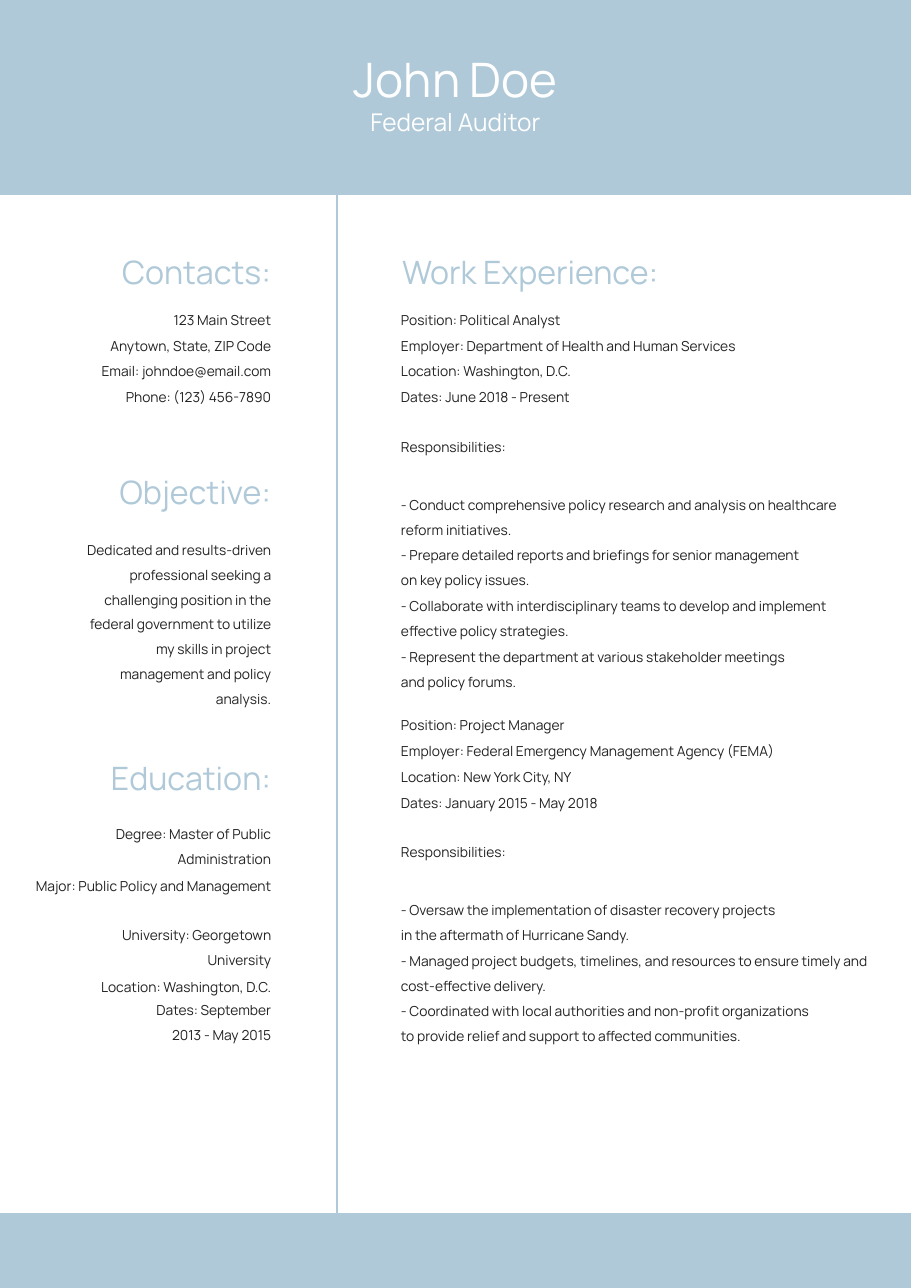
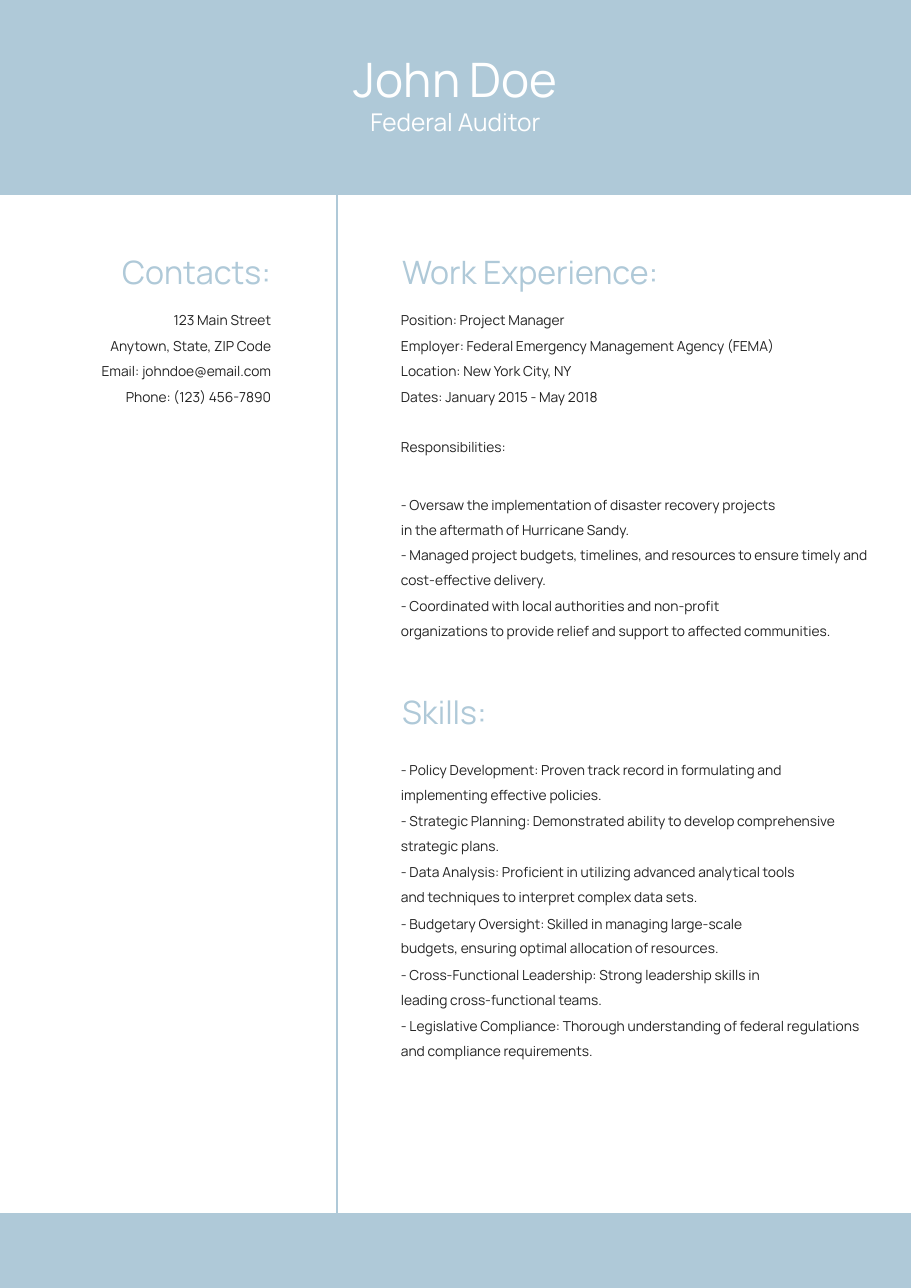
"""Build a two-page résumé with shared bands, contacts and work experience."""
from lxml.etree import SubElement
from pptx import Presentation
from pptx.dml.color import RGBColor
from pptx.enum.shapes import MSO_CONNECTOR, MSO_SHAPE
from pptx.enum.text import MSO_ANCHOR, MSO_AUTO_SIZE, PP_ALIGN
from pptx.oxml.ns import qn
from pptx.util import Inches, Pt

COLORS = {"band": "AFC9D8", "text": "222222", "white": "FFFFFF"}
FONT = "Manrope"
PAGE_WIDTH, PAGE_HEIGHT = 8.27, 11.69
HEADER_HEIGHT, FOOTER_HEIGHT = 1.77, 0.68
DIVIDER_LEFT = 3.06
SIDE_LEFT, SIDE_RIGHT = 0.22, 2.46
MAIN_LEFT, MAIN_WIDTH = 3.64, 4.25
HEADING_TOP, FIRST_LINE_TOP = 2.29, 2.83
LINE_PITCH, ITEM_PITCH, SKILL_PITCH = 0.7 / 3, 0.46, 2.32 / 5
LINE_HEIGHT, ITEM_HEIGHT = 0.15, 0.38

NAME, ROLE = "John Doe", "Federal Auditor"
CONTACTS = [
    "123 Main Street",
    "Anytown, State, ZIP Code",
    "Email: johndoe@email.com",
    "Phone: (123) 456-7890",
]
OBJECTIVE = (
    "Dedicated and results-driven professional seeking a challenging position in the "
    "federal government to utilize my skills in project management and policy analysis."
)
EDUCATION = [
    ("Degree: Master of Public Administration", 0.22, 7.42, ITEM_HEIGHT),
    ("Major: Public Policy and Management", 0.22, 7.89, ITEM_HEIGHT),
    ("University: Georgetown University", 0.57, 8.34, ITEM_HEIGHT),
    ("Location: Washington, D.C.", 0.6, 8.81, LINE_HEIGHT),
    ("Dates: September\n2013 - May 2015", 0.57, 9.02, ITEM_HEIGHT),
]
ANALYST_FACTS = [
    "Position: Political Analyst",
    "Employer: Department of Health and Human Services",
    "Location: Washington, D.C.",
    "Dates: June 2018 - Present",
]
ANALYST_DUTIES = [
    "- Conduct comprehensive policy research and analysis on healthcare reform initiatives.",
    "- Prepare detailed reports and briefings for senior management\non key policy issues.",
    "- Collaborate with interdisciplinary teams to develop and implement "
    "effective policy strategies.",
    "- Represent the department at various stakeholder meetings\nand policy forums.",
]
MANAGER_FACTS = [
    "Position: Project Manager",
    "Employer: Federal Emergency Management Agency (FEMA)",
    "Location: New York City, NY",
    "Dates: January 2015 - May 2018",
]
MANAGER_DUTIES = [
    "- Oversaw the implementation of disaster recovery projects\n"
    "in the aftermath of Hurricane Sandy.",
    "- Managed project budgets, timelines, and resources to ensure timely and "
    "cost-effective delivery.",
]
RELIEF_DUTY_FIRST_PAGE = (
    "- Coordinated with local authorities and non-profit organizations\n"
    "to provide relief and support to affected communities."
)
RELIEF_DUTY_SECOND_PAGE = (
    "- Coordinated with local authorities and non-profit\n"
    "organizations to provide relief and support to affected communities."
)
SKILLS = [
    "- Policy Development: Proven track record in formulating and "
    "implementing effective policies.",
    "- Strategic Planning: Demonstrated ability to develop comprehensive strategic plans.",
    "- Data Analysis: Proficient in utilizing advanced analytical tools\n"
    "and techniques to interpret complex data sets.",
    "- Budgetary Oversight: Skilled in managing large-scale\n"
    "budgets, ensuring optimal allocation of resources.",
    "- Cross-Functional Leadership: Strong leadership skills in\n"
    "leading cross-functional teams.",
    "- Legislative Compliance: Thorough understanding of federal regulations "
    "and compliance requirements.",
]


def rgb(name):
    return RGBColor.from_string(COLORS[name])


def write(box, text, size, color, align, spacing=1.0):
    frame = box.text_frame
    frame.text = text
    frame.word_wrap = True
    frame.auto_size = MSO_AUTO_SIZE.SHAPE_TO_FIT_TEXT
    frame.vertical_anchor = MSO_ANCHOR.TOP
    frame.margin_left = frame.margin_right = frame.margin_top = frame.margin_bottom = 0
    for para in frame.paragraphs:
        para.alignment = align
        para.line_spacing = spacing
        para.space_before = Pt(0)
        for span in para.runs:
            span.font.name = FONT
            span.font.size = Pt(size)
            span.font.color.rgb = rgb(color)


def add_text(page, text, left, top, width, height, size=9, color="text",
             align=PP_ALIGN.LEFT, spacing=1.0):
    box = page.shapes.add_textbox(Inches(left), Inches(top), Inches(width), Inches(height))
    write(box, text, size, color, align, spacing)


def add_side_text(page, text, left, top, height, **style):
    add_text(page, text, left, top, SIDE_RIGHT - left, height, align=PP_ALIGN.RIGHT, **style)


def add_side_heading(page, text, top):
    add_side_text(page, text, SIDE_LEFT, top, 0.35, size=21, color="band")


def add_main_heading(page, text, top):
    add_text(page, text, 3.65, top, 3.63, 0.35, size=21, color="band")


def add_items(page, items, top, pitch):
    for index, item in enumerate(items):
        add_text(page, item, MAIN_LEFT, top + index * pitch, MAIN_WIDTH, ITEM_HEIGHT,
                 spacing=1.5)


def add_job(page, facts, duties, top):
    for index, fact in enumerate(facts):
        add_text(page, fact, MAIN_LEFT, top + index * LINE_PITCH, MAIN_WIDTH, LINE_HEIGHT)
    add_text(page, "Responsibilities:", MAIN_LEFT, top + 1.15, MAIN_WIDTH, LINE_HEIGHT)
    add_items(page, duties, top + 1.6, ITEM_PITCH)


def add_band(page, top, height):
    band = page.shapes.add_shape(MSO_SHAPE.RECTANGLE, 0, Inches(top),
                                 Inches(PAGE_WIDTH), Inches(height))
    band.shadow.inherit = False
    band.fill.solid()
    band.fill.fore_color.rgb = rgb("band")
    band.line.fill.background()


def add_divider(page):
    divider = page.shapes.add_connector(MSO_CONNECTOR.STRAIGHT, Inches(DIVIDER_LEFT),
                                        Inches(1.68), Inches(DIVIDER_LEFT), Inches(11.08))
    divider.line.color.rgb = rgb("band")
    divider.line.width = Pt(1.5)
    SubElement(divider.element.spPr, qn("a:effectLst"))


def add_page(deck):
    page = deck.slides.add_slide(deck.slide_layouts[0])
    add_band(page, 0, HEADER_HEIGHT)
    headers = [
        (page.shapes.title, NAME, 0.45, 0.52, 31),
        (page.placeholders[1], ROLE, 0.97, 0.27, 16),
    ]
    for box, text, top, height, size in headers:
        box.left, box.top = Inches(2.32), Inches(top)
        box.width, box.height = Inches(3.63), Inches(height)
        write(box, text, size, "white", PP_ALIGN.CENTER)
        page.shapes.element.append(box.element)
    add_divider(page)
    add_band(page, PAGE_HEIGHT - FOOTER_HEIGHT, FOOTER_HEIGHT)
    add_main_heading(page, "Work Experience:", HEADING_TOP)
    add_side_heading(page, "Contacts:", HEADING_TOP)
    for index, contact in enumerate(CONTACTS):
        add_side_text(page, contact, SIDE_LEFT, FIRST_LINE_TOP + index * LINE_PITCH, LINE_HEIGHT)
    return page


def main():
    deck = Presentation()
    deck.slide_width, deck.slide_height = Inches(PAGE_WIDTH), Inches(PAGE_HEIGHT)

    first = add_page(deck)
    add_job(first, ANALYST_FACTS, ANALYST_DUTIES, FIRST_LINE_TOP)
    add_job(first, MANAGER_FACTS, MANAGER_DUTIES + [RELIEF_DUTY_FIRST_PAGE], 6.51)
    add_side_heading(first, "Objective:", 4.29)
    add_side_text(first, OBJECTIVE, 0.74, 4.84, 1.74, spacing=1.5)
    add_side_heading(first, "Education:", 6.88)
    for text, left, top, height in EDUCATION:
        add_side_text(first, text, left, top, height, spacing=1.5)

    second = add_page(deck)
    add_job(second, MANAGER_FACTS, MANAGER_DUTIES + [RELIEF_DUTY_SECOND_PAGE], FIRST_LINE_TOP)
    add_main_heading(second, "Skills:", 6.28)
    add_items(second, SKILLS, 6.84, SKILL_PITCH)

    deck.save("out.pptx")


if __name__ == "__main__":
    main()
